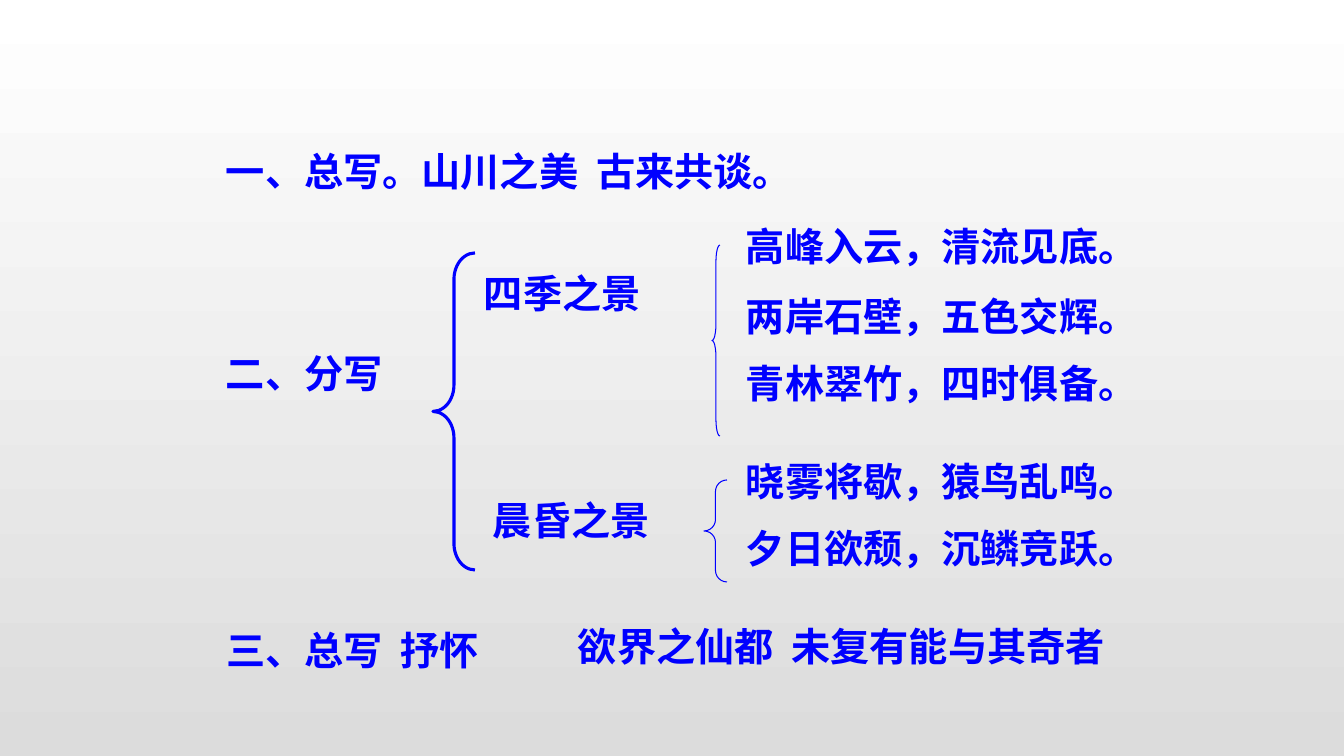
from dataclasses import dataclass

from pptx import Presentation
from pptx.dml.color import RGBColor
from pptx.enum.shapes import MSO_SHAPE as Shape
from pptx.enum.text import MSO_ANCHOR as Anchor, PP_ALIGN as Align
from pptx.util import Emu, Pt

EMU_PER_PX = 914400 / 100.8


@dataclass(frozen=True)
class Theme:
    ink: RGBColor = RGBColor(0x00, 0x00, 0xFF)
    background_top: RGBColor = RGBColor(0xFF, 0xFF, 0xFF)
    background_bottom: RGBColor = RGBColor(0xDC, 0xDC, 0xDC)
    font: str = "Noto Sans CJK SC"
    text_size: int = 28
    line_pitch: int = 34
    line_gap: int = 14


THEME = Theme()

# left, top, width, height in px, then the lines of text
WRAPPED_TEXTS = [
    # Main headings
    (216, 139, 703, 57, ["一、总写。山川之美  古来共谈。"]),
    (216, 341, 210, 57, ["二、分写"]),
    (216, 618, 345, 57, ["三、总写  抒怀"]),
    # Seasons
    (474, 261, 222, 57, ["四季之景"]),
    (736, 214, 487, 57, ["高峰入云，清流见底。"]),
    (736, 284, 487, 129, ["两岸石壁，五色交辉。", "青林翠竹，四时俱备。"]),
    # Dawn and dusk
    (736, 449, 487, 129, ["晓雾将歇，猿鸟乱鸣。", "夕日欲颓，沉鳞竞跃。"]),
]
UNWRAPPED_TEXTS = [
    (483, 488, 177, 57, ["晨昏之景"]),
    (568, 614, 547, 58, ["欲界之仙都  未复有能与其奇者"]),
]

# left, top, width, height in px, curl of the ends, line width in points
BRACES = [
    (433, 253, 42, 317, 0.63, 2.25),
    (712, 245, 8, 191, 2.01, 0.75),
    (704, 480, 23, 102, 0.5, 0.75),
]


def px(length):
    return Emu(round(length * EMU_PER_PX))


def paint_background(slide):
    fill = slide.background.fill
    fill.gradient()
    fill.gradient_angle = 270
    colours = (THEME.background_top, THEME.background_bottom)
    for position, (stop, colour) in enumerate(zip(fill.gradient_stops, colours)):
        stop.position = position
        stop.color.rgb = colour


def style_run(run):
    font = run.font
    font.name = THEME.font
    font.size = Pt(THEME.text_size)
    font.bold = True
    font.color.rgb = THEME.ink
    # East Asian glyphs take their typeface from a separate element
    properties = run._r.get_or_add_rPr()
    latin = properties.find("{*}latin")
    east_asian = properties.makeelement(latin.tag.replace("latin", "ea"), {"typeface": THEME.font})
    latin.addnext(east_asian)


def add_text(slide, left, top, width, height, lines, wrap=True):
    box = slide.shapes.add_textbox(px(left), px(top), px(width), px(height))
    text_frame = box.text_frame
    text_frame.word_wrap = wrap
    text_frame.vertical_anchor = Anchor.TOP
    text_frame.margin_left = text_frame.margin_right = px(10)
    text_frame.margin_top, text_frame.margin_bottom = px(8), px(2)
    text_frame.text = "\n".join(lines)
    for index, paragraph in enumerate(text_frame.paragraphs):
        paragraph.alignment = Align.LEFT
        paragraph.line_spacing = Pt(THEME.line_pitch)
        paragraph.space_before = Pt(THEME.line_gap if index else 0)
        for run in paragraph.runs:
            style_run(run)


def add_brace(slide, left, top, width, height, curl, line_width):
    brace = slide.shapes.add_shape(Shape.LEFT_BRACE, px(left), px(top), px(width), px(height))
    brace.adjustments[0] = curl
    brace.adjustments[1] = 0.5
    brace.shadow.inherit = False
    brace.fill.background()
    brace.line.color.rgb = THEME.ink
    brace.line.width = Pt(line_width)


def main():
    presentation = Presentation()
    presentation.slide_width, presentation.slide_height = px(1344), px(756)
    slide = presentation.slides.add_slide(presentation.slide_layouts[6])
    paint_background(slide)

    for text in WRAPPED_TEXTS:
        add_text(slide, *text)
    for text in UNWRAPPED_TEXTS:
        add_text(slide, *text, wrap=False)
    for brace in BRACES:
        add_brace(slide, *brace)

    presentation.save("out.pptx")


if __name__ == "__main__":
    main()
